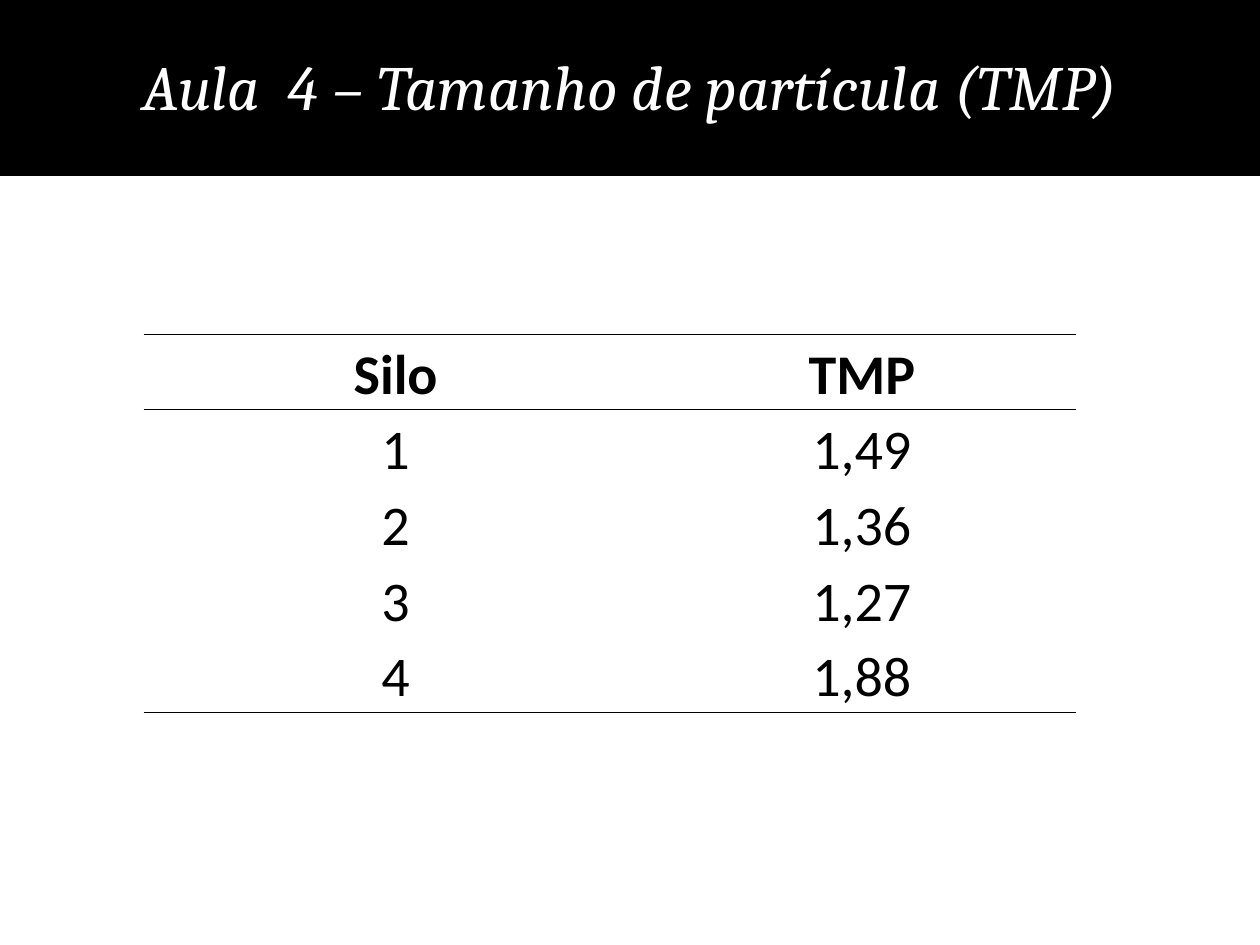
from lxml.etree import SubElement
from pptx import Presentation
from pptx.dml.color import RGBColor
from pptx.enum.shapes import MSO_SHAPE
from pptx.enum.text import MSO_ANCHOR as ANCHOR, PP_ALIGN
from pptx.oxml.ns import qn
from pptx.util import Inches, Pt

TITLE = "Aula  4 – Tamanho de partícula (TMP)"
ROWS = [
    ("Silo", "TMP"),
    ("1", "1,49"),
    ("2", "1,36"),
    ("3", "1,27"),
    ("4", "1,88"),
]
COLORS = {"black": "000000", "white": "FFFFFF"}
WIDTH, HEIGHT = 10, 7.5
BANNER = (0, -0.03, WIDTH, 1.42)
TABLE_LEFT, TABLE_TOP = 1.14, 2.65
COLUMNS = (4, 3.4)
ROW_HEIGHT = 0.6
CELL_INSET = 0.01


def rgb(name):
    return RGBColor.from_string(COLORS[name])


def write(tf, text, size, font, color="black", bold=False, italic=False):
    p = tf.paragraphs[0]
    p.alignment = PP_ALIGN.CENTER
    r = p.add_run()
    r.text = text
    f = r.font
    f.size, f.name, f.bold, f.italic = Pt(size), font, bold, italic
    f.color.rgb = rgb(color)


def set_borders(cell, ruled, width=0.5):
    """Rule the sides in ruled (letters of L, R, T, B) and clear the others."""
    tc_pr = cell._tc.get_or_add_tcPr()
    for side in "LRTB":
        ln = SubElement(tc_pr, qn(f"a:ln{side}"), w=str(Pt(width)))
        if side in ruled:
            fill = SubElement(ln, qn("a:solidFill"))
            SubElement(fill, qn("a:srgbClr"), val=COLORS["black"])
        else:
            SubElement(ln, qn("a:noFill"))


def add_banner(s):
    sp = s.shapes.add_shape(MSO_SHAPE.RECTANGLE, *map(Inches, BANNER))
    sp.shadow.inherit = False
    sp.fill.solid()
    sp.fill.fore_color.rgb = rgb("black")
    sp.line.color.rgb = rgb("black")
    sp.line.width = Pt(0.75)
    tf = sp.text_frame
    tf.word_wrap = False
    tf.vertical_anchor = ANCHOR.MIDDLE
    write(tf, TITLE, 36, "Cambria", color="white", italic=True)


def add_silo_table(s):
    box = (TABLE_LEFT, TABLE_TOP, sum(COLUMNS), ROW_HEIGHT * len(ROWS))
    table = s.shapes.add_table(len(ROWS), len(COLUMNS), *map(Inches, box)).table
    table.first_row = table.horz_banding = False
    for column, width in zip(table.columns, COLUMNS):
        column.width = Inches(width)
    # Rules lie above and below the header and below the last row.
    ruled = {0: "TB", 1: "T", len(ROWS) - 1: "B"}
    for i, row in enumerate(ROWS):
        table.rows[i].height = Inches(ROW_HEIGHT)
        for j, text in enumerate(row):
            cell = table.cell(i, j)
            cell.margin_left = cell.margin_right = cell.margin_top = Inches(CELL_INSET)
            cell.margin_bottom = 0
            cell.vertical_anchor = ANCHOR.BOTTOM
            set_borders(cell, ruled.get(i, ""))
            cell.fill.background()
            write(cell.text_frame, text, 32, "Calibri", bold=i == 0)


def main():
    prs = Presentation()
    prs.slide_width, prs.slide_height = Inches(WIDTH), Inches(HEIGHT)
    s = prs.slides.add_slide(prs.slide_layouts[6])
    add_banner(s)
    add_silo_table(s)
    prs.save("out.pptx")


if __name__ == "__main__":
    main()
